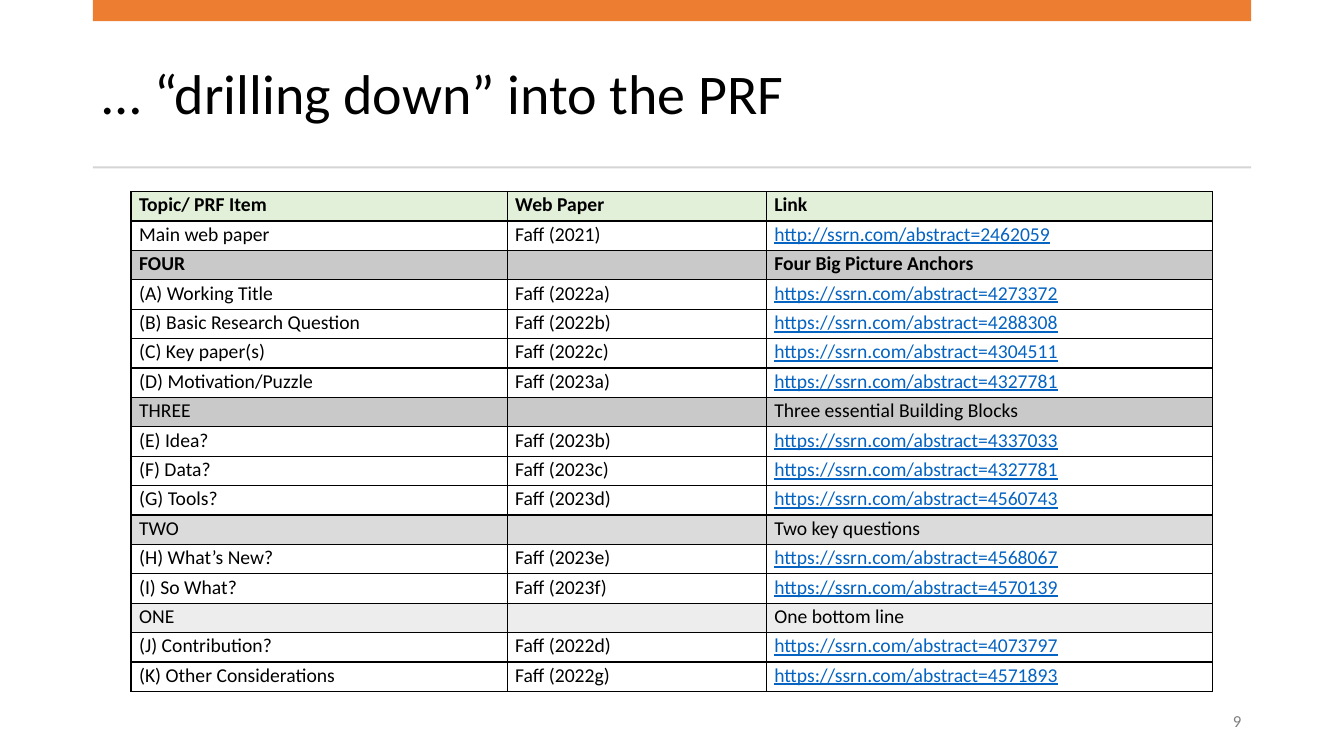
"""Build the slide that lists the online paper behind each PRF item."""
from lxml import etree
from pptx import Presentation, util as u
from pptx.dml.color import RGBColor
from pptx.enum import shapes, text
from pptx.oxml import ns

BLACK = RGBColor(0x00, 0x00, 0x00)
WHITE = RGBColor(0xFF, 0xFF, 0xFF)
ORANGE = RGBColor(0xED, 0x7D, 0x31)
RULE_GREY = RGBColor(0xD5, 0xD5, 0xD5)
NUMBER_GREY = RGBColor(0x80, 0x80, 0x80)
LINK_BLUE = RGBColor(0x05, 0x63, 0xC1)
PALE_GREEN = RGBColor(0xE2, 0xEF, 0xD9)
DARK_BAND = RGBColor(0xC9, 0xC9, 0xC9)
MID_BAND = RGBColor(0xDB, 0xDB, 0xDB)
LIGHT_BAND = RGBColor(0xED, 0xED, 0xED)

MARGIN, CONTENT_WIDTH = 0.92, 11.49
COLUMN_WIDTHS = (3.73, 2.57, 4.43)
TABLE_TOP, TABLE_HEIGHT = 1.9, 4.96
BOLD_ROWS = ("Topic/ PRF Item", "FOUR")
BAND_FILLS = {
    "Topic/ PRF Item": PALE_GREEN,
    "FOUR": DARK_BAND,
    "THREE": DARK_BAND,
    "TWO": MID_BAND,
    "ONE": LIGHT_BAND,
}
ROWS = [
    ("Topic/ PRF Item", "Web Paper", "Link"),
    ("Main web paper", "Faff (2021)", "http://ssrn.com/abstract=2462059"),
    ("FOUR", "", "Four Big Picture Anchors"),
    ("(A) Working Title", "Faff (2022a)", "https://ssrn.com/abstract=4273372"),
    ("(B) Basic Research Question", "Faff (2022b)", "https://ssrn.com/abstract=4288308"),
    ("(C) Key paper(s)", "Faff (2022c)", "https://ssrn.com/abstract=4304511"),
    ("(D) Motivation/Puzzle", "Faff (2023a)", "https://ssrn.com/abstract=4327781"),
    ("THREE", "", "Three essential Building Blocks"),
    ("(E) Idea?", "Faff (2023b)", "https://ssrn.com/abstract=4337033"),
    ("(F) Data?", "Faff (2023c)", "https://ssrn.com/abstract=4327781"),
    ("(G) Tools?", "Faff (2023d)", "https://ssrn.com/abstract=4560743"),
    ("TWO", "", "Two key questions"),
    ("(H) What’s New?", "Faff (2023e)", "https://ssrn.com/abstract=4568067"),
    ("(I) So What?", "Faff (2023f)", "https://ssrn.com/abstract=4570139"),
    ("ONE", "", "One bottom line"),
    ("(J) Contribution?", "Faff (2022d)", "https://ssrn.com/abstract=4073797"),
    ("(K) Other Considerations", "Faff (2022g)", "https://ssrn.com/abstract=4571893"),
]


def add_span(para, words, size, color, bold=False):
    span = para.add_run()
    span.text = words
    span.font.name = "Calibri"
    span.font.size = u.Pt(size)
    span.font.bold = bold
    span.font.color.rgb = color
    return span


def add_borders(cell):
    properties = cell._tc.get_or_add_tcPr()
    for side in ("a:lnL", "a:lnR", "a:lnT", "a:lnB"):
        line = etree.SubElement(properties, ns.qn(side), w=str(u.Pt(1)))
        fill = etree.SubElement(line, ns.qn("a:solidFill"))
        etree.SubElement(fill, ns.qn("a:srgbClr"), val=str(BLACK))


deck = Presentation()
deck.slide_width, deck.slide_height = u.Inches(13.33), u.Inches(7.5)
page = deck.slides.add_slide(deck.slide_layouts.get_by_name("Title Only"))

title = page.shapes.title
title.left, title.top = u.Inches(MARGIN), u.Inches(0.37)
title.width, title.height = u.Inches(CONTENT_WIDTH), u.Inches(1.18)
title.text_frame.vertical_anchor = text.MSO_ANCHOR.MIDDLE
para = title.text_frame.paragraphs[0]
para.alignment = text.PP_ALIGN.LEFT
para.line_spacing = 0.9
add_span(para, "… “drilling down” into the PRF", 40, BLACK)

for top, height, color in ((0, 0.21, ORANGE), (1.65, 0.02, RULE_GREY)):
    bar = page.shapes.add_shape(
        shapes.MSO_SHAPE.RECTANGLE, u.Inches(MARGIN), u.Inches(top),
        u.Inches(CONTENT_WIDTH), u.Inches(height))
    bar.shadow.inherit = False
    bar.fill.solid()
    bar.fill.fore_color.rgb = color
    bar.line.fill.background()

number_box = page.shapes.add_textbox(
    u.Inches(9.53), u.Inches(6.95), u.Inches(2.88), u.Inches(0.4))
number_box.text_frame.word_wrap = True
number_box.text_frame.vertical_anchor = text.MSO_ANCHOR.MIDDLE
para = number_box.text_frame.paragraphs[0]
para.alignment = text.PP_ALIGN.RIGHT
add_span(para, "9", 12, NUMBER_GREY)

table = page.shapes.add_table(
    len(ROWS), len(COLUMN_WIDTHS), u.Inches(1.3), u.Inches(TABLE_TOP),
    u.Inches(sum(COLUMN_WIDTHS)), u.Inches(TABLE_HEIGHT)).table
table.first_row = table.horz_banding = False
for column, width in zip(table.columns, COLUMN_WIDTHS):
    column.width = u.Inches(width)

for row_index, row in enumerate(ROWS):
    table.rows[row_index].height = u.Inches(TABLE_HEIGHT / len(ROWS))
    for column_index, words in enumerate(row):
        cell = table.cell(row_index, column_index)
        add_borders(cell)
        cell.fill.solid()
        cell.fill.fore_color.rgb = BAND_FILLS.get(row[0], WHITE)
        cell.margin_left = cell.margin_right = u.Inches(0.08)
        cell.margin_top = cell.margin_bottom = 0
        para = cell.text_frame.paragraphs[0]
        para.alignment = text.PP_ALIGN.JUSTIFY
        para.line_spacing = 1.07
        para.space_after = u.Pt(8)
        if words:
            is_link = words.startswith("http")
            span = add_span(para, words, 14, LINK_BLUE if is_link else BLACK, row[0] in BOLD_ROWS)
            span.font.underline = is_link
        else:
            etree.SubElement(para._p, ns.qn("a:endParaRPr"), sz="1400")

deck.save("out.pptx")
